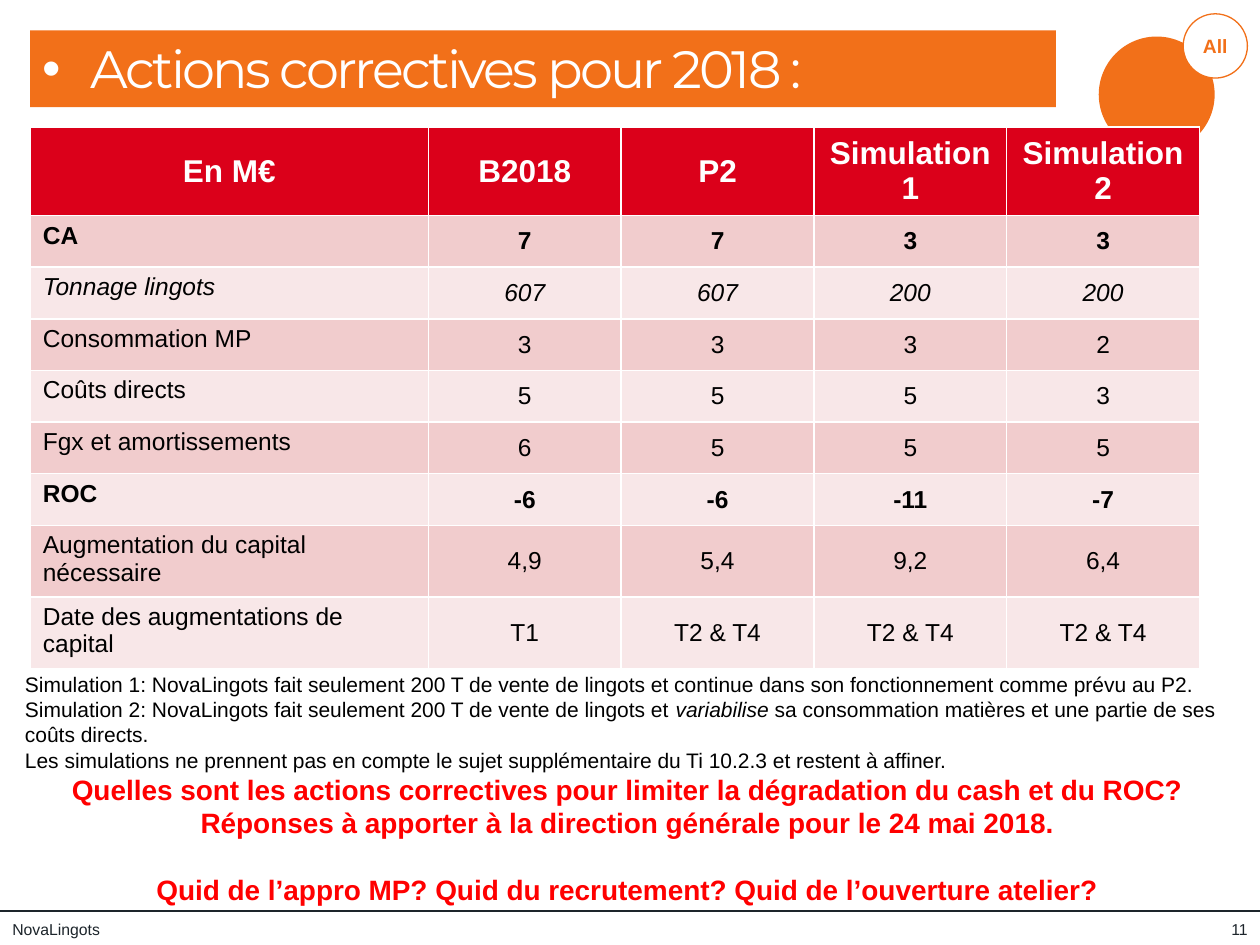
from lxml import etree
from pptx import Presentation
from pptx.dml.color import RGBColor
from pptx.enum.shapes import MSO_CONNECTOR, MSO_SHAPE
from pptx.enum.text import MSO_ANCHOR, PP_ALIGN
from pptx.oxml.ns import qn
from pptx.util import Inches, Pt

LINE, OVAL, RECT = MSO_CONNECTOR.STRAIGHT, MSO_SHAPE.OVAL, MSO_SHAPE.RECTANGLE
TOP, MID = MSO_ANCHOR.TOP, MSO_ANCHOR.MIDDLE
LEFT, MIDST, RIGHT = PP_ALIGN.LEFT, PP_ALIGN.CENTER, PP_ALIGN.RIGHT

ORANGE = RGBColor(0xF2, 0x70, 0x19)
DARK = RGBColor(0x1D, 0x25, 0x2B)
WHITE = RGBColor(0xFF, 0xFF, 0xFF)
BLACK = RGBColor(0x00, 0x00, 0x00)
CRIMSON = RGBColor(0xDB, 0x00, 0x1A)
RED = RGBColor(0xFF, 0x00, 0x00)
BANDS = RGBColor(0xF1, 0xCC, 0xCD), RGBColor(0xF8, 0xE7, 0xE8)

PLAIN, BOLD, SLANT = {}, {"bold": True}, {"italic": True}
HEAD = ["En M€", "B2018", "P2", "Simulation 1", "Simulation 2"]
ROWS = [
    (BOLD, ["CA", "7", "7", "3", "3"]),
    (SLANT, ["Tonnage lingots", "607", "607", "200", "200"]),
    (PLAIN, ["Consommation MP", "3", "3", "3", "2"]),
    (PLAIN, ["Coûts directs", "5", "5", "5", "3"]),
    (PLAIN, ["Fgx et amortissements", "6", "5", "5", "5"]),
    (BOLD, ["ROC", "-6", "-6", "-11", "-7"]),
    (PLAIN, ["Augmentation du capital nécessaire", "4,9", "5,4", "9,2", "6,4"]),
    (PLAIN, ["Date des augmentations de capital", "T1", "T2 & T4", "T2 & T4", "T2 & T4"]),
]
HIGHS = [0.7] + [0.41] * 6 + [0.53] * 2
FIRM = "NovaLingots"
SALES = f"{FIRM} fait seulement 200 T de vente de lingots et "
NOTES = [
    [("Simulation 1: " + SALES
      + "continue dans son fonctionnement comme prévu au P2.", PLAIN)],
    [("Simulation 2: " + SALES, PLAIN), ("variabilise", SLANT),
     (" sa consommation matières et une partie de ses coûts directs.", PLAIN)],
    [("Les simulations ne prennent pas en compte le sujet supplémentaire "
      "du Ti 10.2.3 et restent à affiner.", PLAIN)],
]
ASKS = [
    ("Quelles sont les actions correctives pour limiter la dégradation du cash "
     "et du ROC? Réponses à apporter à la direction générale pour le 24 mai 2018.", 0),
    ("Quid de l’appro MP? Quid du recrutement? Quid de l’ouverture atelier?", 19),
]


class Deck:
    """Holds the slide and the shared style of its elements."""

    def __init__(self, slide, face="Arial"):
        self.shapes = slide.shapes
        self.face = face

    def run(self, para, text, size, color, **form):
        run = para.add_run()
        run.text = text
        base = {"name": self.face, "size": Pt(size), "bold": False, "italic": False}
        for key, val in (base | form).items():
            setattr(run.font, key, val)
        run.font.color.rgb = color
        return run

    def rule(self, y, width):
        line = self.shapes.add_connector(LINE, 0, Inches(y), Inches(10), Inches(y))
        line.line.color.rgb = DARK
        line.line.width = Pt(width)
        etree.SubElement(line.element.spPr, qn("a:effectLst"))

    def shape(self, kind, area, fill, edge=None):
        shape = self.shapes.add_shape(kind, *map(Inches, area))
        shape.shadow.inherit = False
        shape.fill.solid()
        shape.fill.fore_color.rgb = fill
        if edge is None:
            shape.line.fill.background()
        else:
            shape.line.color.rgb = edge
            shape.line.width = Pt(0.75)
        return shape

    def box(self, area, anchor=TOP):
        frame = self.shapes.add_textbox(*map(Inches, area)).text_frame
        frame.word_wrap = True
        frame.vertical_anchor = anchor
        return frame

    def foot(self, area, text, align):
        para = self.box(area, MID).paragraphs[0]
        para.alignment = align
        self.run(para, text, 9, DARK)

    def badge(self, area, text):
        frame = self.shape(OVAL, area, WHITE, ORANGE).text_frame
        frame.margin_left = frame.margin_right = 0
        frame.vertical_anchor = MID
        frame.paragraphs[0].alignment = MIDST
        self.run(frame.paragraphs[0], text, 11, ORANGE, bold=True)

    def title(self, area, text):
        frame = self.shape(RECT, area, ORANGE).text_frame
        frame.vertical_anchor = TOP
        para = frame.paragraphs[0]
        para.alignment = LEFT
        props = para._p.get_or_add_pPr()
        props.set("marL", str(Inches(0.38)))
        props.set("indent", str(-Inches(0.38)))
        etree.SubElement(props, qn("a:buFont"), typeface="Arial")
        etree.SubElement(props, qn("a:buChar"), char="•")
        run = self.run(para, text, 30, WHITE, name="Montserrat")
        run._r.get_or_add_rPr().set("spc", "-150")

    def cell(self, cell, text, fill, anchor, align, size, color, form):
        cell.fill.solid()
        cell.fill.fore_color.rgb = fill
        cell.vertical_anchor = anchor
        para = cell.text_frame.paragraphs[0]
        para.alignment = align
        self.run(para, text, size, color, **form)
        etree.SubElement(para._p, qn("a:endParaRPr"), sz=str(size * 100))

    def table(self, area, wide, slim):
        grid = self.shapes.add_table(len(HIGHS), len(HEAD), *map(Inches, area)).table
        for i, col in enumerate(grid.columns):
            col.width = Inches(slim if i else wide)
        for row, high in zip(grid.rows, HIGHS):
            row.height = Inches(high)
        for j, text in enumerate(HEAD):
            self.cell(grid.cell(0, j), text, CRIMSON, MID, MIDST, 18, WHITE, BOLD)
        for i, (form, texts) in enumerate(ROWS):
            for j, text in enumerate(texts):
                place = (MID, MIDST) if j else (TOP, LEFT)
                self.cell(grid.cell(i + 1, j), text, BANDS[i % 2], *place, 14, BLACK, form)

    def notes(self, area):
        frame = self.box(area)
        for i, parts in enumerate(NOTES):
            para = frame.add_paragraph() if i else frame.paragraphs[0]
            for text, form in parts:
                self.run(para, text, 12, BLACK, **form)
        for text, gap in ASKS:
            para = frame.add_paragraph()
            para.alignment = MIDST
            para.space_before = Pt(gap)
            self.run(para, text, 16, RED, bold=True)


def main():
    show = Presentation()
    show.slide_width, show.slide_height = Inches(10), Inches(7.5)
    deck = Deck(show.slides.add_slide(show.slide_layouts[6]))
    deck.rule(7.23, 1.5)
    deck.shape(OVAL, (8.72, 0.29, 0.92, 0.92), ORANGE)
    deck.badge((9.39, 0.11, 0.51, 0.51), "All")
    deck.foot((0, 7.25, 3.44, 0.25), FIRM, LEFT)
    deck.foot((9.51, 7.25, 0.49, 0.25), "11", RIGHT)
    deck.title((0.24, 0.24, 8.14, 0.61), "Actions correctives pour 2018 :")
    deck.table((0.24, 1.01, 9.27, sum(HIGHS)), 3.16, 1.53)
    deck.notes((0.1, 5.28, 9.76, 1.99))
    show.save("out.pptx")


if __name__ == "__main__":
    main()
